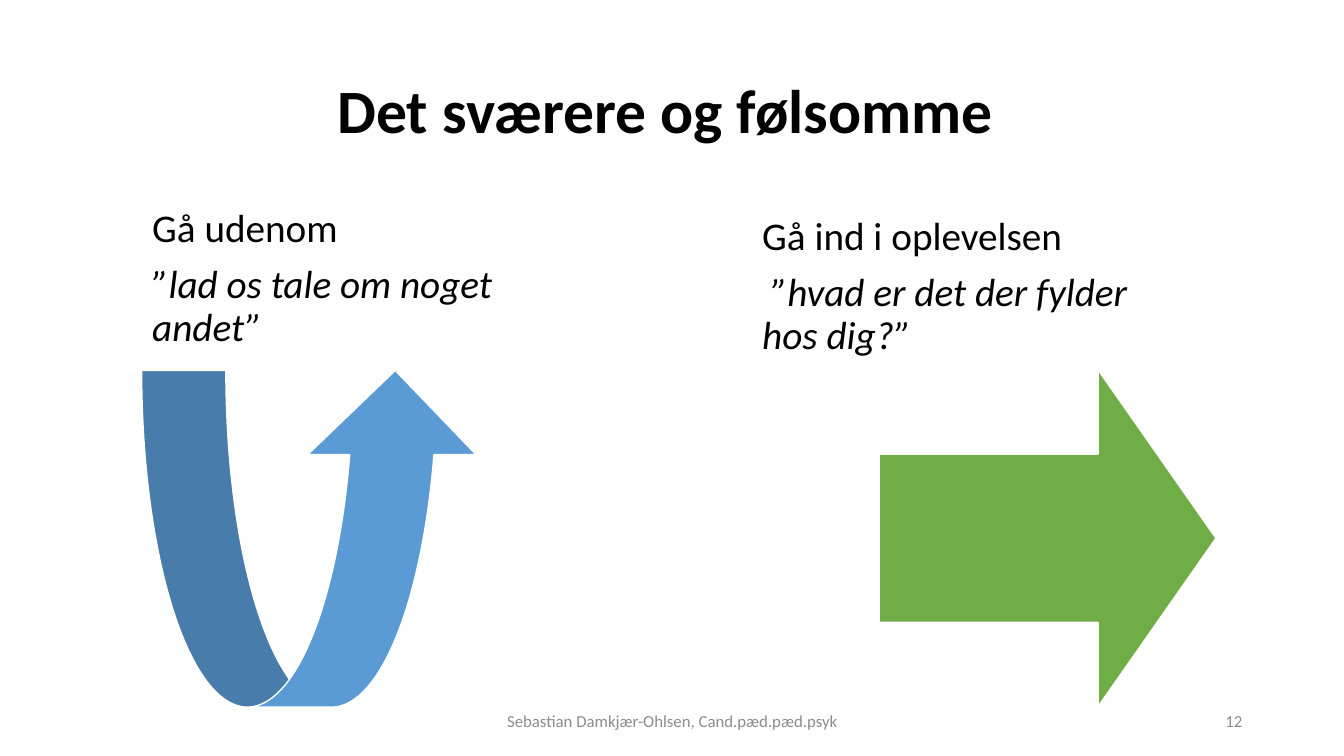
from lxml.etree import SubElement
from pptx import Presentation
from pptx.dml.color import RGBColor
from pptx.enum.shapes import MSO_SHAPE as Preset
from pptx.enum.text import MSO_ANCHOR as Anchor, MSO_AUTO_SIZE as AutoSize, PP_ALIGN as Align
from pptx.oxml.ns import qn
from pptx.util import Pt

EMU_PER_PX = 9144  # 100 px to the inch
COLORS = {"text": "000000", "footer": "8C8C8C", "around": "5B9BD5",
          "into": "70AD47", "edge": "FFFFFF"}


def px(length):
    return length * EMU_PER_PX


def write(para, text, size=28, color="text", bold=False, italic=False):
    """Append one formatted run to a paragraph."""
    span = para.add_run()
    span.text = text
    span.font.name = "Calibri"
    span.font.size = Pt(size)
    span.font.bold = bold
    span.font.italic = italic
    span.font.color.rgb = RGBColor.from_string(COLORS[color])


class SlideBuilder:
    def __init__(self, page):
        self.page = page

    def place(self, box, at, anchor):
        box.left, box.top, box.width, box.height = map(px, at)
        frame = box.text_frame
        frame.word_wrap = True
        frame.auto_size = AutoSize.NONE
        frame.vertical_anchor = anchor
        return frame

    def title(self, text, at):
        para = self.place(self.page.shapes.title, at, Anchor.MIDDLE).paragraphs[0]
        para.alignment = Align.CENTER
        para.line_spacing = 0.9
        write(para, text, size=44, bold=True)

    def choice(self, slot, heading, quote, at, lead=""):
        """Fill a body placeholder with a heading and an italic quote."""
        frame = self.place(self.page.placeholders[slot], at, Anchor.TOP)
        for para in (frame.paragraphs[0], frame.add_paragraph()):
            para.alignment = Align.LEFT
            para.line_spacing = 0.9
            para.space_before = Pt(10)
            props = para._p.get_or_add_pPr()
            props.set("marL", "0")
            props.set("indent", "0")
            SubElement(props, qn("a:buNone"))
        write(frame.paragraphs[0], heading)
        if lead:
            write(para, lead)
        write(para, quote, italic=True)

    def arrow(self, preset, at, rotation, color, adjustments=()):
        shape = self.page.shapes.add_shape(preset, *map(px, at))
        shape.rotation = rotation
        shape.shadow.inherit = False
        shape.fill.solid()
        shape.fill.fore_color.rgb = RGBColor.from_string(COLORS[color])
        shape.line.color.rgb = RGBColor.from_string(COLORS["edge"])
        shape.line.width = Pt(1)
        for index, value in enumerate(adjustments):
            shape.adjustments[index] = value

    def footer(self, text, at, align):
        box = self.page.shapes.add_textbox(*map(px, at))
        para = self.place(box, at, Anchor.MIDDLE).paragraphs[0]
        para.alignment = align
        write(para, text, size=12, color="footer")


def main():
    deck = Presentation()
    deck.slide_width, deck.slide_height = px(1333), px(750)
    slide = SlideBuilder(deck.slides.add_slide(deck.slide_layouts[3]))

    slide.title("Det sværere og følsomme ", (92, 40, 1150, 145))
    slide.choice(1, "Gå udenom", "”lad os tale om noget andet”", (141, 202, 394, 173))
    slide.choice(2, "Gå ind i oplevelsen", "”hvad er det der fylder hos dig?”",
                 (746, 210, 394, 173), lead=" ")
    slide.arrow(Preset.CURVED_RIGHT_ARROW, (141, 367, 334, 335), 270, "around")
    slide.arrow(Preset.UP_ARROW, (872, 367, 334, 334), 90, "into", (0.5, 0.35))
    slide.footer("Sebastian Damkjær-Ohlsen, Cand.pæd.pæd.psyk", (442, 695, 450, 40), Align.CENTER)
    slide.footer("12", (942, 695, 300, 40), Align.RIGHT)

    deck.save("out.pptx")


if __name__ == "__main__":
    main()
